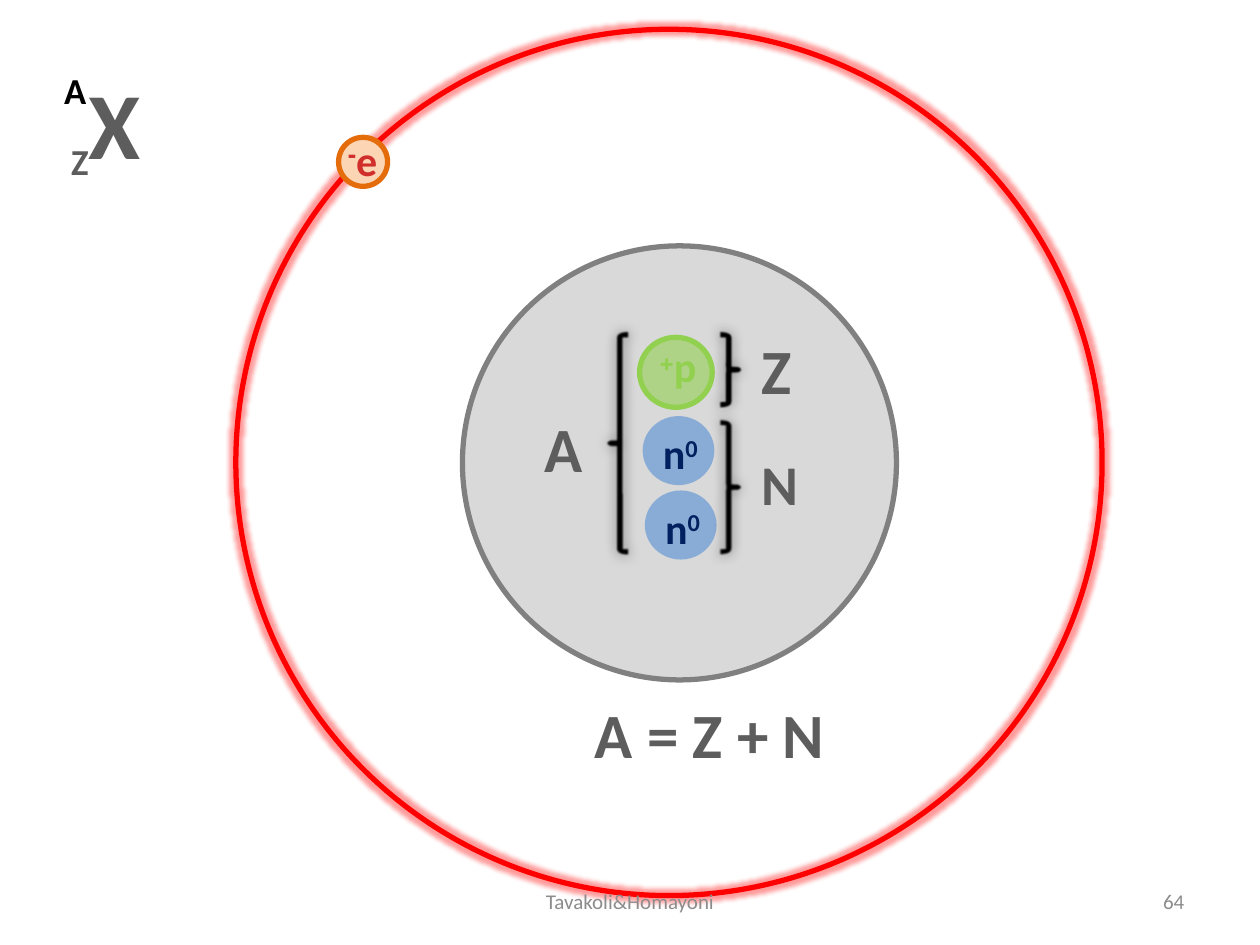
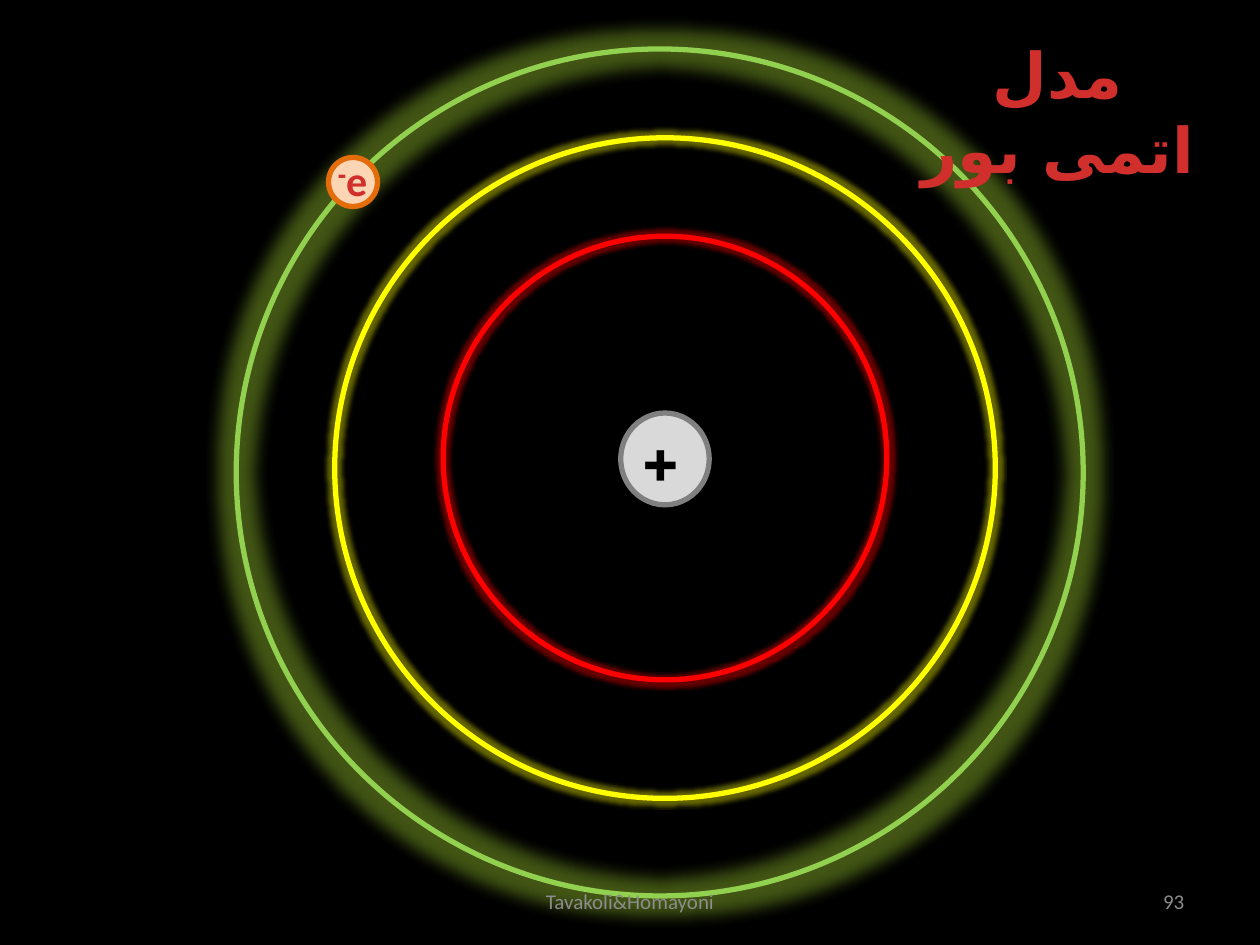
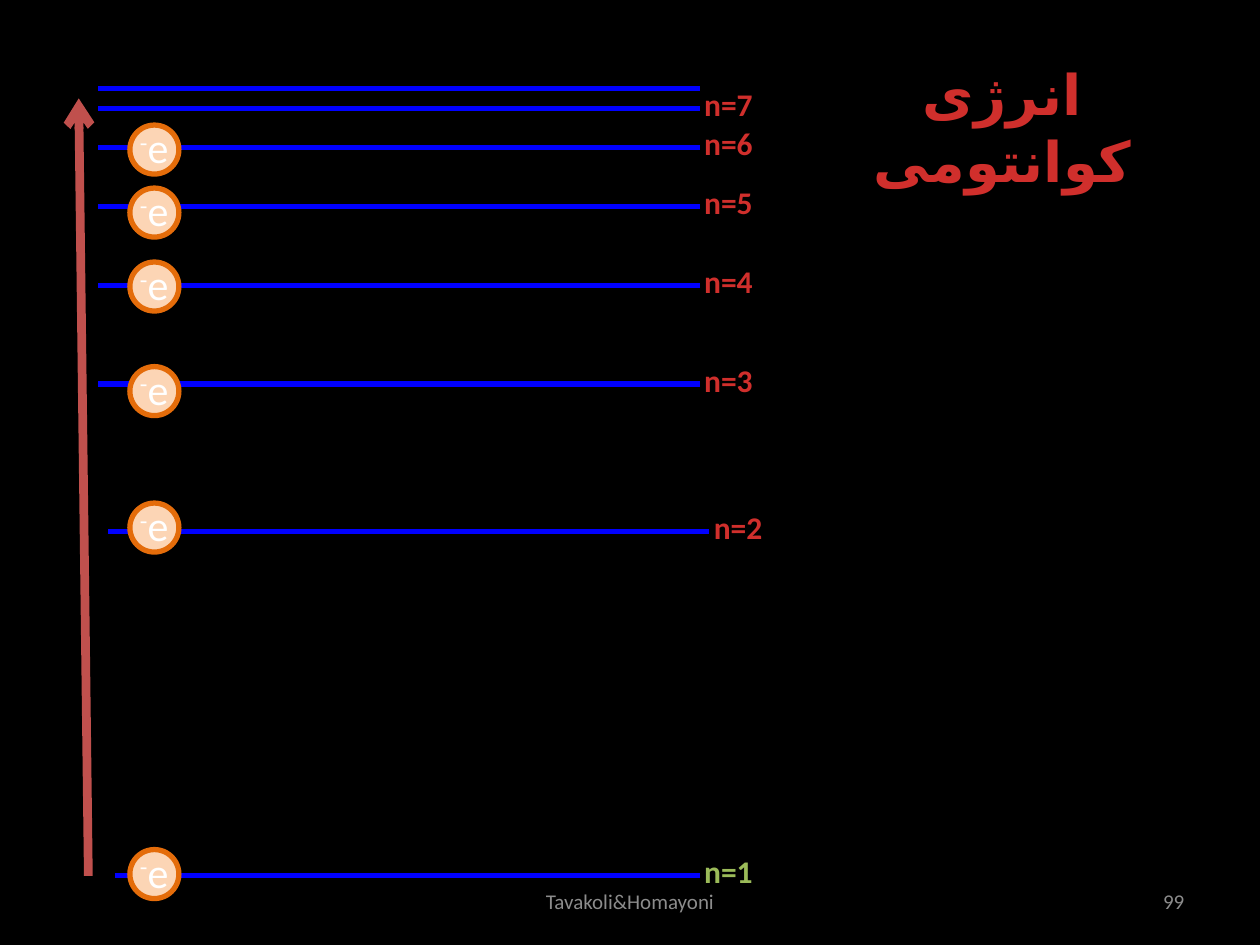
from lxml import etree
from pptx import Presentation
from pptx.dml.color import RGBColor
from pptx.enum.shapes import MSO_CONNECTOR, MSO_SHAPE
from pptx.enum.text import MSO_ANCHOR, MSO_AUTO_SIZE, PP_ALIGN as AL
from pptx.oxml.ns import qn
from pptx.util import Pt

FONT = "Calibri"
PERSIAN_FONT = "DejaVu Sans"
BLACK = RGBColor(0x00, 0x00, 0x00)
WHITE = RGBColor(0xFF, 0xFF, 0xFF)
RED = RGBColor(0xFF, 0x00, 0x00)
YELLOW = RGBColor(0xFF, 0xFF, 0x00)
BLUE = RGBColor(0x00, 0x00, 0xFF)
GREEN = RGBColor(0x92, 0xD0, 0x50)
LIME = RGBColor(0xA5, 0xD5, 0x32)
OLIVE = RGBColor(0x9B, 0xBB, 0x59)
CRIMSON = RGBColor(0xD0, 0x2F, 0x2C)
BRICK = RGBColor(0xC0, 0x50, 0x4D)
PEACH = RGBColor(0xFC, 0xD5, 0xB5)
ORANGE = RGBColor(0xE4, 0x6C, 0x0A)
SKY = RGBColor(0x55, 0x8E, 0xD5)
NAVY = RGBColor(0x00, 0x20, 0x60)
PALE = RGBColor(0xD9, 0xD9, 0xD9)
GREY = RGBColor(0x80, 0x80, 0x80)
DARK = RGBColor(0x5D, 0x5D, 0x5D)
FOOTER = RGBColor(0x8C, 0x8C, 0x8C)

TITLE_ONLY, BLANK = 5, 6
SUPER, SUB = 30, -25


def add_effect(sp, kind, color=None, alpha=100, **attrs):
    effects = sp._element.spPr.find(qn("a:effectLst"))
    effect = etree.SubElement(effects, qn("a:" + kind), {k: str(v) for k, v in attrs.items()})
    if color is not None:
        clr = etree.SubElement(effect, qn("a:srgbClr"), val=str(color))
        etree.SubElement(clr, qn("a:alpha"), val=str(alpha * 1000))


class Deck:
    def __init__(self):
        self.prs = Presentation()
        self.prs.slide_width, self.prs.slide_height = Pt(720), Pt(540)

    def slide(self, layout, background):
        self.s = self.prs.slides.add_slide(self.prs.slide_layouts[layout])
        fill = self.s.background.fill
        fill.solid()
        fill.fore_color.rgb = background

    def fill_text(self, sp, runs, size, color, bold=True, align=AL.CENTER,
                  anchor=MSO_ANCHOR.TOP, rtl=True):
        """Runs are (text, baseline percent) or (text, baseline percent, size)."""
        tf = sp.text_frame
        tf.word_wrap = True
        tf.auto_size = MSO_AUTO_SIZE.NONE
        tf.vertical_anchor = anchor
        tf.margin_left = tf.margin_right = 0
        p = tf.paragraphs[0]
        p.alignment = align
        if rtl:
            p._p.get_or_add_pPr().set("rtl", "1")
        p.font.name, p.font.size, p.font.bold = FONT, Pt(size), bold
        p.font.color.rgb = color
        for text, baseline, *own_size in runs:
            r = p.add_run()
            r.text = text
            if baseline:
                r.font._element.set("baseline", str(baseline * 1000))
            if own_size:
                r.font.size = Pt(own_size[0])

    def text(self, box, runs, size, color, **style):
        if isinstance(runs, str):
            runs = [(runs, 0)]
        sp = self.s.shapes.add_textbox(*map(Pt, box))
        self.fill_text(sp, runs, size, color, **style)

    def title(self, box, text, size):
        sp = self.s.shapes.title
        sp.left, sp.top, sp.width, sp.height = map(Pt, box)
        self.fill_text(sp, [(text, 0)], size, CRIMSON)
        font = sp.text_frame.paragraphs[0].runs[0].font
        font.bold = True
        etree.SubElement(font._element, qn("a:cs"), typeface=PERSIAN_FONT)
        self.s.shapes._spTree.append(sp._element)  # in front of the rings

    def shape(self, kind, box, fill=None, line=None, width=3, alpha=None):
        sp = self.s.shapes.add_shape(kind, *map(Pt, box))
        sp.shadow.inherit = False
        if fill is None:
            sp.fill.background()
        else:
            sp.fill.solid()
            sp.fill.fore_color.rgb = fill
            if alpha:
                clr = sp._element.spPr.find(qn("a:solidFill"))[0]
                etree.SubElement(clr, qn("a:alpha"), val=str(alpha * 1000))
        if line is None:
            sp.line.fill.background()
        else:
            sp.line.color.rgb = line
            sp.line.width = Pt(width)
        return sp

    def ellipse(self, x, y, w, h, fill=None, line=None, alpha=None):
        return self.shape(MSO_SHAPE.OVAL, (x, y, w, h), fill, line, alpha=alpha)

    def orbit(self, x, y, size, color, glow, glow_color=None):
        sp = self.ellipse(x, y, size, size, line=color)
        add_effect(sp, "glow", glow_color or color, 40, rad=Pt(glow))

    def brace(self, kind, box):
        sp = self.shape(kind, box, line=BLACK, width=5)
        add_effect(sp, "outerShdw", BLACK, 50, blurRad=Pt(7.5), algn="ctr", rotWithShape=0)
        add_effect(sp, "softEdge", rad=Pt(1))

    def electron(self, x, y, color=CRIMSON, bold=True):
        self.ellipse(x, y, 28, 28, PEACH, ORANGE)
        self.text((x - 2.25, y - 5.3, 32, 36), [("e", 0), ("-", SUPER)], 24, color, bold=bold)

    def line(self, start, end, color, width=3, arrow=False):
        c = self.s.shapes.add_connector(MSO_CONNECTOR.STRAIGHT, *map(Pt, start + end))
        c.line.color.rgb = color
        c.line.width = Pt(width)
        if arrow:
            etree.SubElement(c.line._get_or_add_ln(), qn("a:tailEnd"), type="arrow")
        etree.SubElement(c._element.spPr, qn("a:effectLst"))

    def footer(self, number):
        style = dict(bold=False, anchor=MSO_ANCHOR.MIDDLE, rtl=False)
        self.text((516, 500.5, 160.8, 28.75), number, 12, FOOTER, align=AL.RIGHT, **style)
        self.text((246, 500.5, 228, 28.75), "Tavakoli&Homayoni", 12, FOOTER, **style)


def nucleus_slide(d):
    d.slide(BLANK, WHITE)
    d.ellipse(264.25, 140.5, 248, 248, PALE, GREY)
    d.orbit(134.75, 16.75, 495, RED, 5)
    d.electron(193.5, 78.5)

    d.ellipse(365.5, 192.75, 41.5, 40, GREEN, GREEN, alpha=60)
    d.text((369.5, 191.25, 36, 36), [("p", 0), ("+", SUPER)], 24, GREEN)
    for x, y in ((368.5, 280.25), (367.25, 237.75)):
        d.ellipse(x, y, 41, 39.5, SKY, alpha=60)
        d.text((x + 3.5, y + 3.25, 36, 36), [("n", 0), ("0", SUPER)], 24, NAVY)

    d.brace(MSO_SHAPE.LEFT_BRACE, (348.5, 191.25, 11.25, 124))
    d.brace(MSO_SHAPE.RIGHT_BRACE, (410.5, 191.25, 11.25, 39.5))
    d.brace(MSO_SHAPE.RIGHT_BRACE, (410.5, 241.75, 11.25, 73.5))
    for box, text, size in (
        ((427.5, 185.75, 32, 51), "Z", 36),
        ((304, 230.5, 36.5, 51), "A", 36),
        ((427.5, 253.25, 36, 46), "N", 32),
        ((332, 394, 147, 51), "A = Z + N", 36),
    ):
        d.text(box, text, size, DARK)

    d.text((32.5, 33.5, 56, 73), [("Z", SUB), ("X", 0, 54)], 36, DARK)
    d.text((11, 11, 38.25, 51), [("A", SUB)], 36, BLACK, align=AL.RIGHT)
    d.footer("64")


def bohr_slide(d):
    d.slide(TITLE_ONLY, BLACK)
    d.orbit(253.25, 135, 253.5, RED, 5)
    d.ellipse(354.75, 236, 50.5, 52.5, PALE, GREY)
    d.text((361.25, 235, 32.5, 51), "+", 36, BLACK)
    d.orbit(135, 28, 484, GREEN, 18, LIME)
    d.orbit(191.25, 78.75, 377.5, YELLOW, 5)
    d.title((525, 16.5, 159, 96), "مدل اتمی بور", 36)
    d.electron(187.75, 90)
    d.footer("93")


def energy_slide(d):
    d.slide(TITLE_ONLY, BLACK)
    left, right = 56.25, 399.75
    level_y = (500.5, 303.75, 219.5, 163.25, 118, 84.25, 62)
    for n, y in enumerate(level_y, 1):
        shift = 5.5 if n == 2 else 0
        start = 65.5 if n == 1 else left + shift
        d.line((start, y), (right + shift, y), BLUE)
        d.text((right + shift - 6, y - 17, 45, 29), f"n={n}", 18, OLIVE if n == 1 else CRIMSON)
    d.line((left, 50.5), (right, 50.5), BLUE)
    d.line((50.5, 500.5), (45, 56.25), BRICK, 5, arrow=True)
    d.title((487.5, 30.25, 170.5, 88), "انرژی کوانتومی", 32)
    d.footer("99")
    for y in (485.5, 287.5, 209.5, 149.75, 107.5, 71.5):
        d.electron(74.25, y, WHITE, bold=False)


def main():
    d = Deck()
    nucleus_slide(d)
    bohr_slide(d)
    energy_slide(d)
    d.prs.save("out.pptx")


if __name__ == "__main__":
    main()
